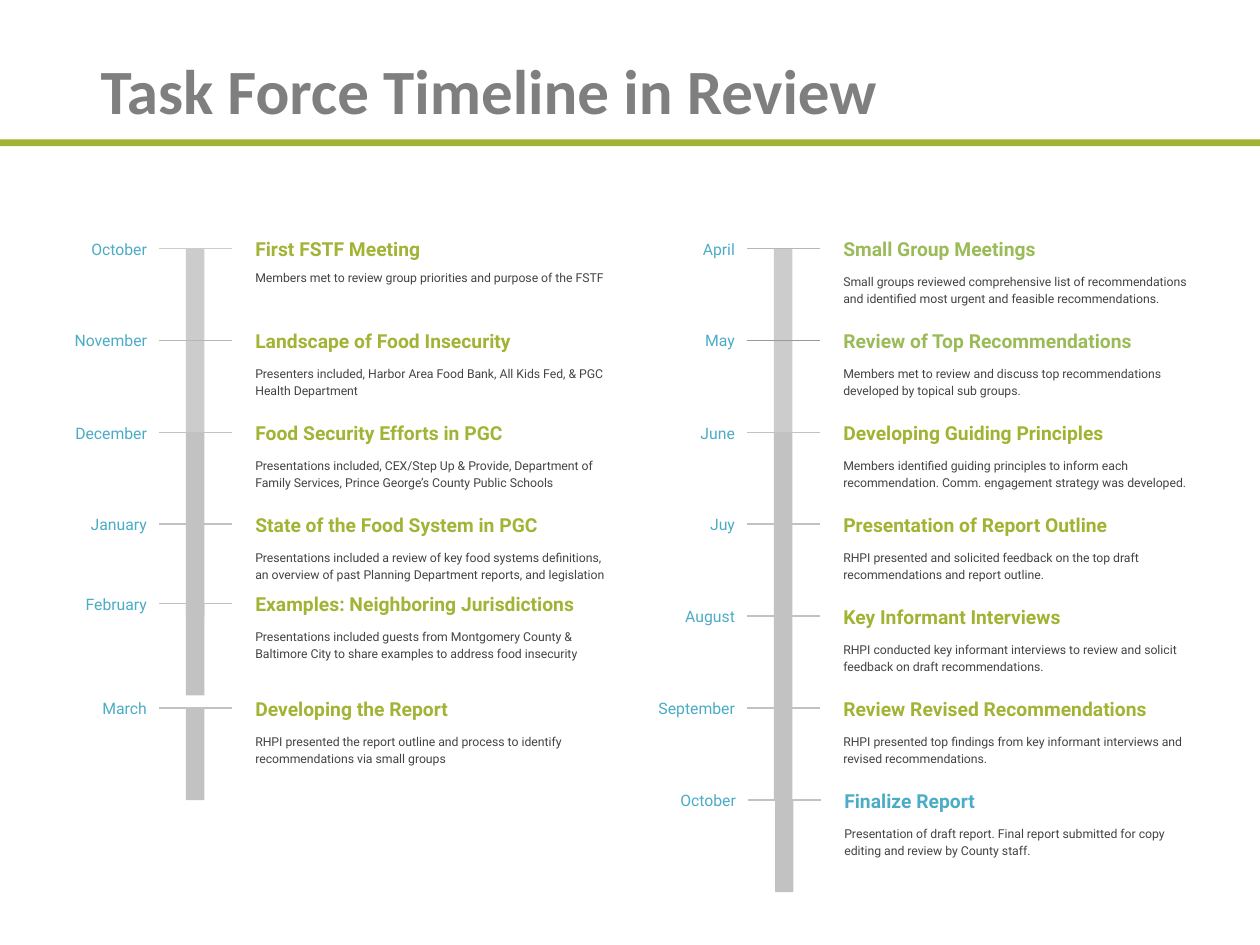
import pptx
import pptx.util
import pptx.dml.color
import pptx.enum.shapes
import pptx.enum.text
import pptx.oxml.ns
import lxml.etree

Pt = pptx.util.Pt
ANCHOR = pptx.enum.text.MSO_ANCHOR
ALIGN = pptx.enum.text.PP_ALIGN
SHAPE = pptx.enum.shapes.MSO_SHAPE

GREEN, LIME, SAGE, BLUE = "A2B335", "A2B333", "9BBB59", "4BACC6"
LIGHT, GRAY, MID, DARK = "CCCCCC", "C2C2C2", "B7B7B7", "999999"
FIRST_Y, PITCH = 141.84, 52.56


def rgb(value):
    return pptx.dml.color.RGBColor.from_string(value)


def add_text(text, box, size, color, font="Roboto", bold=False, inset=7.2, spacing=1.15):
    """Add a wrapped one-paragraph text box and return its paragraph."""
    tf = s.shapes.add_textbox(*[Pt(v) for v in box]).text_frame
    tf.word_wrap = True
    tf.margin_left = tf.margin_right = Pt(7.2)
    tf.margin_top = tf.margin_bottom = Pt(inset)
    tf.text = text
    p = tf.paragraphs[0]
    p.line_spacing = spacing
    r = p.runs[0]
    r.font.name, r.font.size, r.font.bold = font, Pt(size), bold
    r.font.color.rgb = rgb(color)
    return p


prs = pptx.Presentation()
prs.slide_width, prs.slide_height = Pt(720), Pt(540)
s = prs.slides.add_slide(prs.slide_layouts[6])

# Each column: left offset, then (slot, month, heading, details, heading, bar, tick colours)
columns = [
    (0, [
        (0, "October", "First FSTF Meeting",
         "Members met to review group priorities and purpose of the FSTF", GREEN, LIGHT, LIGHT),
        (1, "November", "Landscape of Food Insecurity",
         "Presenters included, Harbor Area Food Bank, All Kids Fed, & PGC Health Department",
         GREEN, LIGHT, MID),
        (2, "December", "Food Security Efforts in PGC",
         "Presentations included, CEX/Step Up & Provide, Department of Family Services, "
         "Prince George’s County Public Schools", GREEN, GRAY, GRAY),
        (3, "January", "State of the Food System in PGC",
         "Presentations included a review of key food systems definitions, an overview of past "
         "Planning Department reports, and legislation", GREEN, GRAY, GRAY),
        (3.86, "February", "Examples: Neighboring Jurisdictions",
         "Presentations included guests from Montgomery County & Baltimore City to share "
         "examples to address food insecurity", GREEN, GRAY, GRAY),
        (5, "March", "Developing the Report",
         "RHPI presented the report outline and process to identify recommendations via "
         "small groups", GREEN, GRAY, GRAY),
    ]),
    (336, [
        (0, "April", "Small Group Meetings",
         "Small groups reviewed comprehensive list of recommendations and identified most "
         "urgent and feasible recommendations.", SAGE, LIGHT, MID),
        (1, "May", "Review of Top Recommendations",
         "Members met to review and discuss top recommendations developed by topical "
         "sub groups.", SAGE, LIGHT, DARK),
        (2, "June", "Developing Guiding Principles",
         "Members identified guiding principles to inform each recommendation. Comm. "
         "engagement strategy was developed.", LIME, GRAY, GRAY),
        (3, "Juy", "Presentation of Report Outline",
         "RHPI presented and solicited feedback on the top draft recommendations and "
         "report outline.", LIME, GRAY, GRAY),
        (4, "August", "Key Informant Interviews",
         "RHPI conducted key informant interviews to review and solicit feedback on draft "
         "recommendations.", LIME, GRAY, GRAY),
        (5, "September", "Review Revised Recommendations",
         "RHPI presented top findings from key informant interviews and revised "
         "recommendations.", GREEN, GRAY, GRAY),
    ]),
    (336.6, [
        (6, "October", "Finalize Report",
         "Presentation of draft report. Final report submitted for copy editing and review "
         "by County staff.", BLUE, GRAY, GRAY),
    ]),
]

rects = [(0, 79.7, 720, 3.8, LIME)]
for left, events in columns:
    for slot, *_, bar_color, _ in events:
        rects.append((left + 106.3, FIRST_Y + slot * PITCH + 0.3, 10.5, 52.3, bar_color))
for x, y, w, h, color in rects:
    sp = s.shapes.add_shape(SHAPE.RECTANGLE, Pt(x), Pt(y), Pt(w), Pt(h))
    sp.shadow.inherit = False
    sp.fill.solid()
    sp.fill.fore_color.rgb = rgb(color)
    sp.line.fill.background()

p = add_text("Task Force Timeline in Review", (50.4, 20.2, 631.4, 61.2), 36, "7F7F7F",
             font="Calibri", bold=True, inset=3.6, spacing=1.0)
s.shapes[-1].text_frame.vertical_anchor = ANCHOR.MIDDLE

for left, events in columns:
    for slot, month, heading, details, heading_color, _, tick_color in events:
        y = FIRST_Y + slot * PITCH
        add_text(heading, (left + 138.8, y - 15.2, 214.6, 21.6), 11, heading_color, bold=True)
        p = add_text(details, (left + 138.8, y + 6.5, 214.6, 32.4), 7, "434343")
        p.space_after = Pt(16)
        p = add_text(month, (left + 31.2, y - 13, 59.8, 27.4), 9, BLUE)
        p.alignment = ALIGN.RIGHT
        tick = s.shapes.add_connector(pptx.enum.shapes.MSO_CONNECTOR.STRAIGHT,
                                      Pt(left + 132.6), Pt(y), Pt(left + 90.9), Pt(y))
        tick.line.color.rgb = rgb(tick_color)
        tick.line.width = Pt(0.75)
        lxml.etree.SubElement(tick._element.spPr, pptx.oxml.ns.qn("a:effectLst"))

prs.save("out.pptx")
